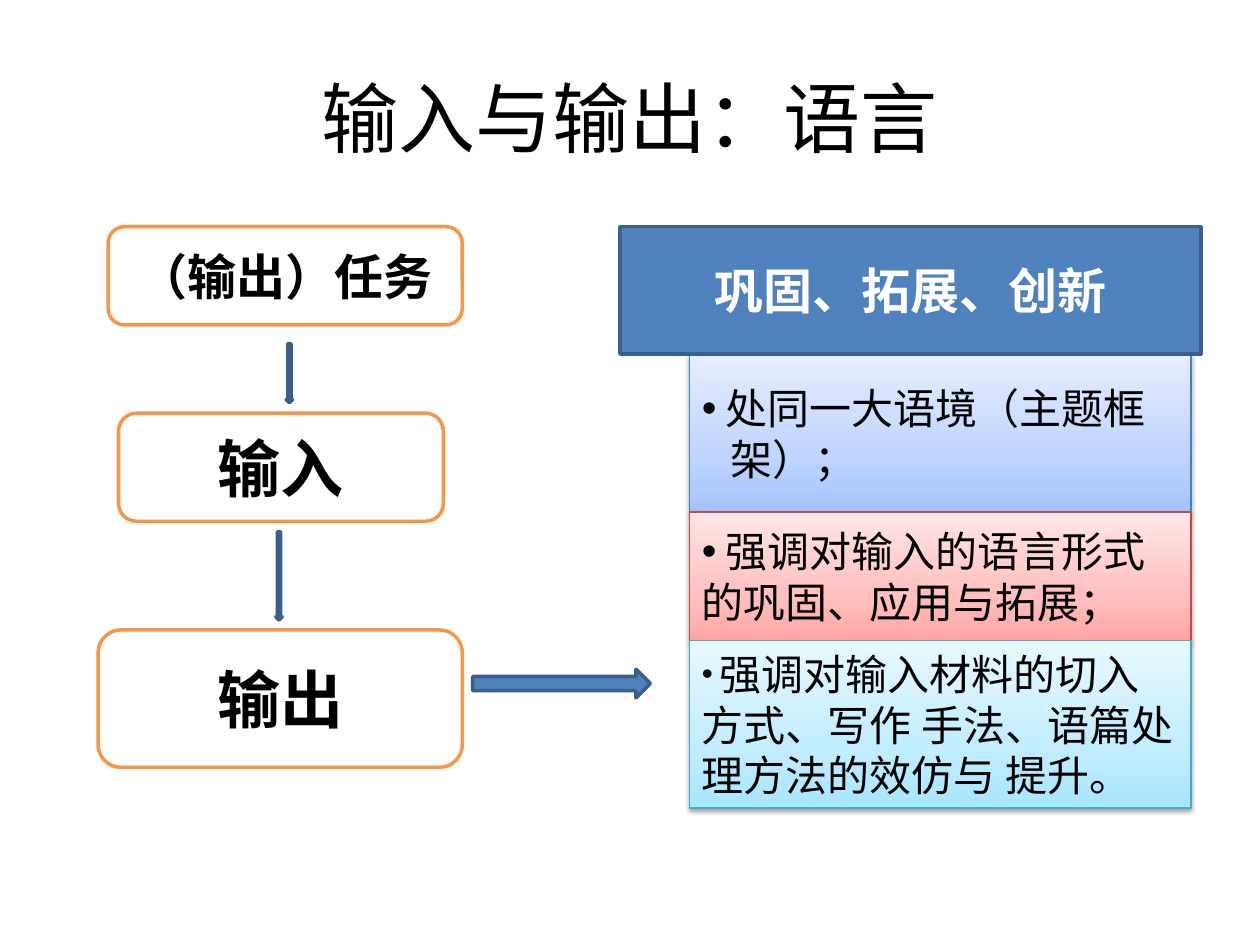
from dataclasses import dataclass

from lxml import etree
from pptx import Presentation
from pptx.dml.color import RGBColor
from pptx.enum import shapes, text
from pptx.oxml import parse_xml
from pptx.oxml.ns import nsdecls, qn
from pptx.util import Cm, Pt


@dataclass(frozen=True)
class Theme:
    font: str = "Calibri"
    black: str = "000000"
    white: str = "FFFFFF"
    orange: str = "F79646"
    blue: str = "4F81BD"
    dark_blue: str = "3A5F8C"
    blue_row: tuple = ("A4C4FF", "BFD4FF", "E6EEFF", "4B7EBC")
    red_row: tuple = ("FFA6A5", "FFC0BF", "FFE7E7", "BF4C48")
    aqua_row: tuple = ("A7E6FF", "C1EDFF", "E7F8FF", "46AAC5")
    title: int = 44
    step: int = 36
    heading: int = 28
    body: int = 24
    small: int = 18
    line: float = 2
    thin: float = 0.75


T = Theme()
GEO = shapes.MSO_SHAPE


def add_run(p, words, size=T.body, color=T.black, bold=False):
    r = p.add_run()
    r.text = words
    r.font.name = T.font
    r.font.size = Pt(size)
    r.font.bold = bold
    r.font.color.rgb = RGBColor.from_string(color)


def write(sp, words, align=text.PP_ALIGN.CENTER, **fmt):
    tf = sp.text_frame
    tf.word_wrap = True
    tf.vertical_anchor = text.MSO_ANCHOR.MIDDLE
    p = tf.paragraphs[0]
    p.alignment = align
    add_run(p, words, **fmt)


def add_block(s, geo, box, fill, line, width=T.line):
    """Add a preset shape; box is left, top, width, height in cm."""
    sp = s.shapes.add_shape(geo, *(Cm(v) for v in box))
    sp.shadow.inherit = False
    if fill:
        sp.fill.solid()
        sp.fill.fore_color.rgb = RGBColor.from_string(fill)
    sp.line.color.rgb = RGBColor.from_string(line)
    sp.line.width = Pt(width)
    return sp


def shade(sp, colors):
    """Give a bottom-to-top gradient of three colours and a soft shadow."""
    sp.fill.gradient()
    grad = sp._element.spPr.find(qn("a:gradFill"))
    stops = grad.find(qn("a:gsLst"))
    for stop in list(stops):
        stops.remove(stop)
    for pos, color in zip((0, 35000, 100000), colors):
        stop = etree.SubElement(stops, qn("a:gs"), pos=str(pos))
        etree.SubElement(stop, qn("a:srgbClr"), val=color)
    grad.find(qn("a:lin")).set("ang", "16200000")
    sp._element.spPr.find(qn("a:effectLst")).append(parse_xml(
        f'<a:outerShdw {nsdecls("a")} blurRad="{Pt(3.1)}" dist="{Pt(1.6)}" '
        'dir="5400000" rotWithShape="0"><a:srgbClr val="000000">'
        '<a:alpha val="38000"/></a:srgbClr></a:outerShdw>'))


def set_bullet(p):
    pPr = p._p.get_or_add_pPr()
    etree.SubElement(pPr, qn("a:buFont"), typeface="Arial")
    etree.SubElement(pPr, qn("a:buChar"), char="•")


def add_title(s, left, top, width, height):
    sp = s.shapes.title
    sp.left, sp.top, sp.width, sp.height = map(Cm, (left, top, width, height))
    write(sp, "输入与输出：语言", size=T.title)


def add_flow(s, left, top):
    """Three steps joined by downward arrows, with an arrow to the panel."""
    steps = [
        ("（输出）任务", T.heading, (0.2, 0, 7.14, 1.98)),
        ("输入", T.step, (0.41, 3.76, 6.55, 2.18)),
        ("输出", T.step, (0, 8.13, 7.34, 2.77)),
    ]
    arrows = [
        (GEO.DOWN_ARROW, (3.79, 2.36, 0.13, 1.19)),
        (GEO.DOWN_ARROW, (3.58, 6.15, 0.13, 1.78)),
        (GEO.RIGHT_ARROW, (7.55, 8.92, 3.58, 0.58)),
    ]
    for words, size, (x, y, w, h) in steps:
        sp = add_block(s, GEO.ROUNDED_RECTANGLE, (left + x, top + y, w, h),
                       T.white, T.orange)
        write(sp, words, size=size, bold=True)
    for geo, (x, y, w, h) in arrows:
        add_block(s, geo, (left + x, top + y, w, h), T.blue, T.dark_blue)


def add_panel(s, left, top, width):
    """A heading bar over a stack of shaded rows."""
    header_height, inset, row_width = 2.57, 1.4, 10.11
    rows = [
        (3.18, T.blue_row, T.body, "处同一大语境（主题框", "架）；"),
        (2.59, T.red_row, T.body, "强调对输入的语言形式的巩固、应用与拓展；", None),
        (3.38, T.aqua_row, T.small,
         "强调对输入材料的切入方式、写作 手法、语篇处理方法的效仿与 提升。", None),
    ]
    y = top + header_height
    for height, (*colors, edge), bullet_size, words, tail in rows:
        sp = add_block(s, GEO.RECTANGLE, (left + inset, y, row_width, height),
                       None, edge, T.thin)
        shade(sp, colors)
        write(sp, " ", align=text.PP_ALIGN.LEFT, size=bullet_size)
        p = sp.text_frame.paragraphs[0]
        add_run(p, words)
        set_bullet(p)
        if tail:
            p = sp.text_frame.add_paragraph()
            p.alignment = text.PP_ALIGN.LEFT
            p._p.get_or_add_pPr().set("marL", str(Cm(0.57)))
            add_run(p, tail)
        y += height
    sp = add_block(s, GEO.RECTANGLE, (left, top, width, header_height),
                   T.blue, T.dark_blue)
    write(sp, "巩固、拓展、创新", size=T.heading, color=T.white, bold=True)


def main():
    prs = Presentation()
    prs.slide_width, prs.slide_height = Cm(25.4), Cm(19.05)
    s = prs.slides.add_slide(prs.slide_layouts[5])
    add_title(s, 1.27, 0.76, 22.86, 3.18)
    add_flow(s, 1.98, 4.57)
    add_panel(s, 12.5, 4.57, 11.71)
    prs.save("out.pptx")


if __name__ == "__main__":
    main()
